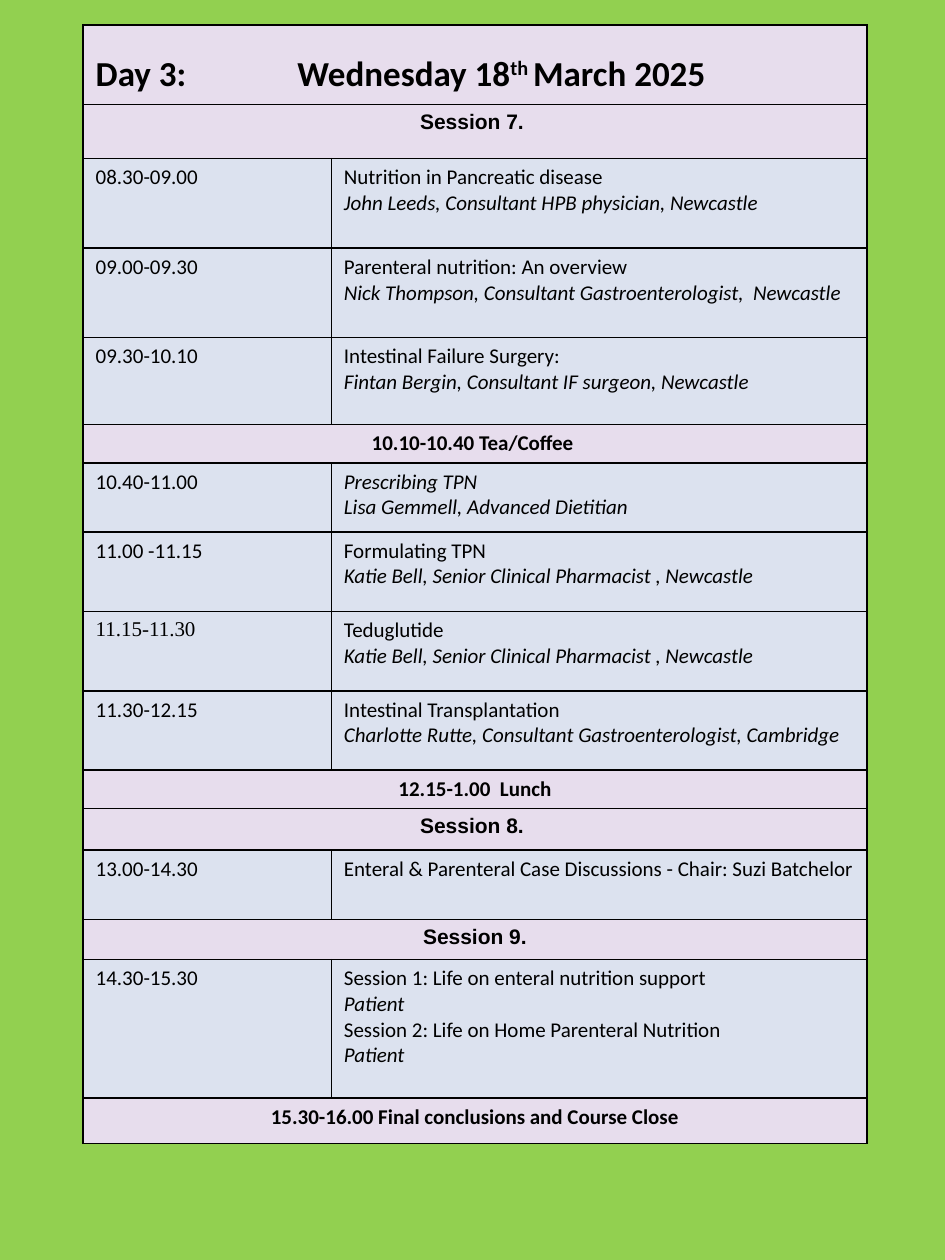
"""Build the timetable slide for day 3 of a nutrition course."""
from lxml import etree
from pptx import Presentation
from pptx.dml.color import RGBColor
from pptx.enum.text import PP_ALIGN
from pptx.oxml.ns import qn
from pptx.util import Inches, Pt

CENTER = PP_ALIGN.CENTER
BLANK = 6
COLORS = {"back": "92D050", "band": "E7DDED", "talk": "DCE2EF", "ink": "000000"}
WIDTHS = [1.97, 4.25]
BODY, SERIF, HEAD = "Calibri", "Times New Roman", "Arial"
PHARM = "Katie Bell, Senior Clinical Pharmacist , Newcastle"

# Bands: (height, text, font). Talks: (height, time, font, [(line, italic)]).
ROWS = [
    (0.43, "Session 7. ", HEAD),
    (0.71, "08.30-09.00", BODY, [
        ("Nutrition in Pancreatic disease", False),
        ("John Leeds, Consultant HPB physician, Newcastle", True)]),
    (0.71, "09.00-09.30", BODY, [
        ("Parenteral nutrition: An overview", False),
        ("Nick Thompson, Consultant Gastroenterologist,  Newcastle", True)]),
    (0.69, "09.30-10.10", BODY, [
        ("Intestinal Failure Surgery:", False),
        ("Fintan Bergin, Consultant IF surgeon, Newcastle", True)]),
    (0.3, "10.10-10.40 Tea/Coffee ", BODY),
    (0.55, "10.40-11.00", BODY, [
        ("Prescribing TPN", True),
        ("Lisa Gemmell, Advanced Dietitian", True)]),
    (0.63, "11.00 -11.15", BODY, [("Formulating TPN", False), (PHARM, True)]),
    (0.63, "11.15-11.30", SERIF, [("Teduglutide", False), (PHARM, True)]),
    (0.63, "11.30-12.15", BODY, [
        ("Intestinal Transplantation", False),
        ("Charlotte Rutte, Consultant Gastroenterologist, Cambridge", True)]),
    (0.3, "12.15-1.00  Lunch", BODY),
    (0.33, "Session 8. ", HEAD),
    (0.55, "13.00-14.30", BODY, [
        ("Enteral & Parenteral Case Discussions - Chair: Suzi Batchelor", False)]),
    (0.32, "Session 9.", HEAD),
    (1.1, "14.30-15.30", BODY, [
        ("Session 1: Life on enteral nutrition support", False),
        ("Patient", True),
        ("Session 2: Life on Home Parenteral Nutrition", False),
        ("Patient", True)]),
    (0.36, "15.30-16.00 Final conclusions and Course Close", BODY),
]
TITLE = 0.63


def rgb(name):
    """Return the named colour."""
    return RGBColor.from_string(COLORS[name])


def add_run(para, text, font=BODY, size=12, bold=False, italic=False):
    """Add one formatted run and return it."""
    run = para.add_run()
    run.text = text
    run.font.name = font
    run.font.size = Pt(size)
    run.font.bold = bold
    run.font.italic = italic
    run.font.color.rgb = rgb("ink")
    return run


def style_cell(cell, color):
    """Give a cell its borders and fill."""
    props = cell._tc.get_or_add_tcPr()
    for side in ("lnL", "lnR", "lnT", "lnB"):
        line = etree.SubElement(props, qn("a:" + side), w=str(Pt(1)))
        fill = etree.SubElement(line, qn("a:solidFill"))
        etree.SubElement(fill, qn("a:srgbClr"), val=COLORS["ink"])
    cell.fill.solid()
    cell.fill.fore_color.rgb = rgb(color)


def merge_row(left, right):
    """Style both cells of a row as a band and join them."""
    for cell in (left, right):
        style_cell(cell, "band")
    left.merge(right)


def fill_title(left, right):
    """Write the day and date across the first row."""
    merge_row(left, right)
    left.margin_top = Inches(0.22)
    para = left.text_frame.paragraphs[0]
    tabs = etree.SubElement(para._p.get_or_add_pPr(), qn("a:tabLst"))
    etree.SubElement(tabs, qn("a:tab"), pos=str(Inches(1.6)), algn="l")
    add_run(para, "Day 3:\tWednesday 18", size=20, bold=True)
    sup = add_run(para, "th ", size=20, bold=True)
    sup._r.get_or_add_rPr().set("baseline", "30000")
    add_run(para, "March 2025", size=20, bold=True)


def fill_band(left, right, text, font):
    """Write a centred heading across a row."""
    merge_row(left, right)
    para = left.text_frame.paragraphs[0]
    para.alignment = CENTER
    add_run(para, text, font, bold=True)


def fill_talk(left, right, time, font, lines):
    """Write a time slot and its talk lines."""
    for cell in (left, right):
        style_cell(cell, "talk")
    add_run(left.text_frame.paragraphs[0], time, font)
    frame = right.text_frame
    for i, (text, italic) in enumerate(lines):
        para = frame.add_paragraph() if i else frame.paragraphs[0]
        add_run(para, text, italic=italic)


def add_plan(slide):
    """Add the timetable."""
    highs = [TITLE] + [row[0] for row in ROWS]
    table = slide.shapes.add_table(
        len(highs), len(WIDTHS), Inches(0.66), Inches(0.2),
        Inches(sum(WIDTHS)), Inches(sum(highs))).table
    table.first_row = table.horz_banding = False
    for col, width in zip(table.columns, WIDTHS):
        col.width = Inches(width)
    for row, high in zip(table.rows, highs):
        row.height = Inches(high)
    fill_title(*table.rows[0].cells)
    for i, (_, *parts) in enumerate(ROWS, 1):
        fill = fill_talk if len(parts) == 3 else fill_band
        fill(table.cell(i, 0), table.cell(i, 1), *parts)


def main():
    """Build and save the slide."""
    deck = Presentation()
    deck.slide_width, deck.slide_height = Inches(7.5), Inches(10)
    slide = deck.slides.add_slide(deck.slide_layouts[BLANK])
    slide.background.fill.solid()
    slide.background.fill.fore_color.rgb = rgb("back")
    add_plan(slide)
    deck.save("out.pptx")


if __name__ == "__main__":
    main()
